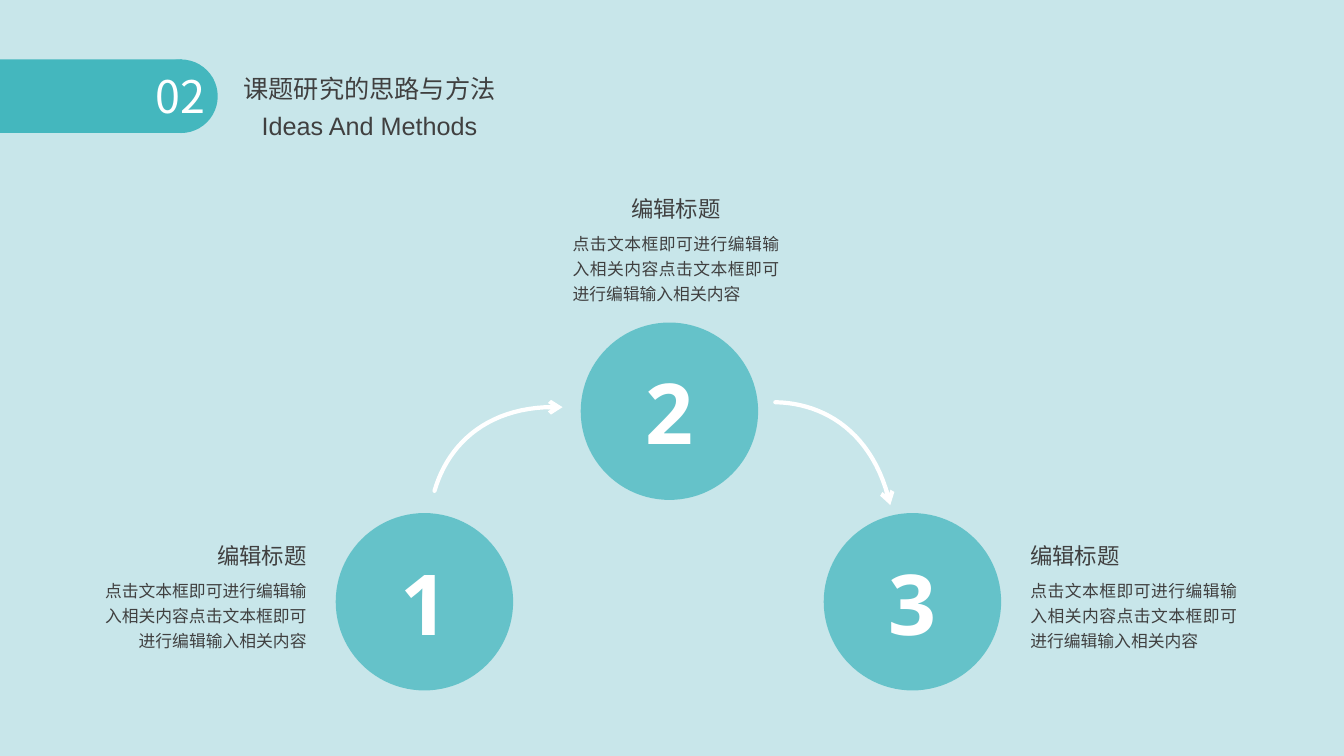
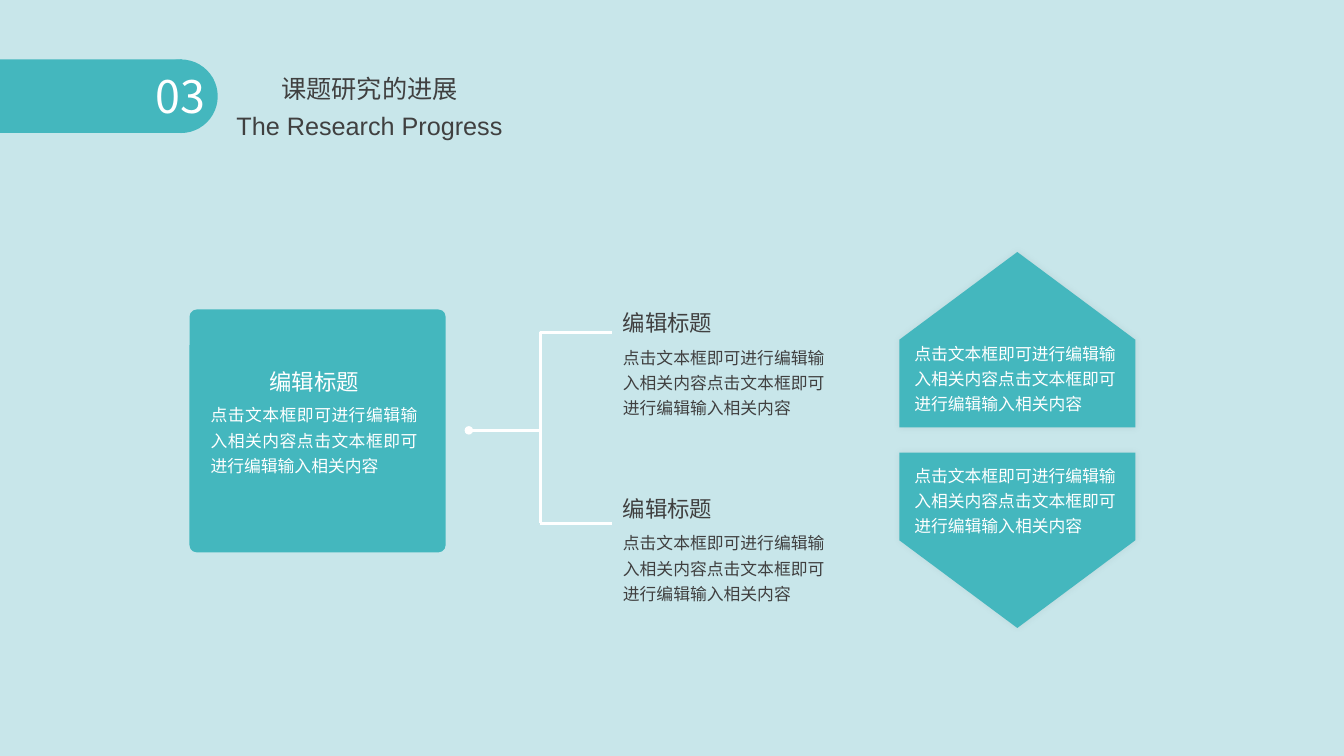
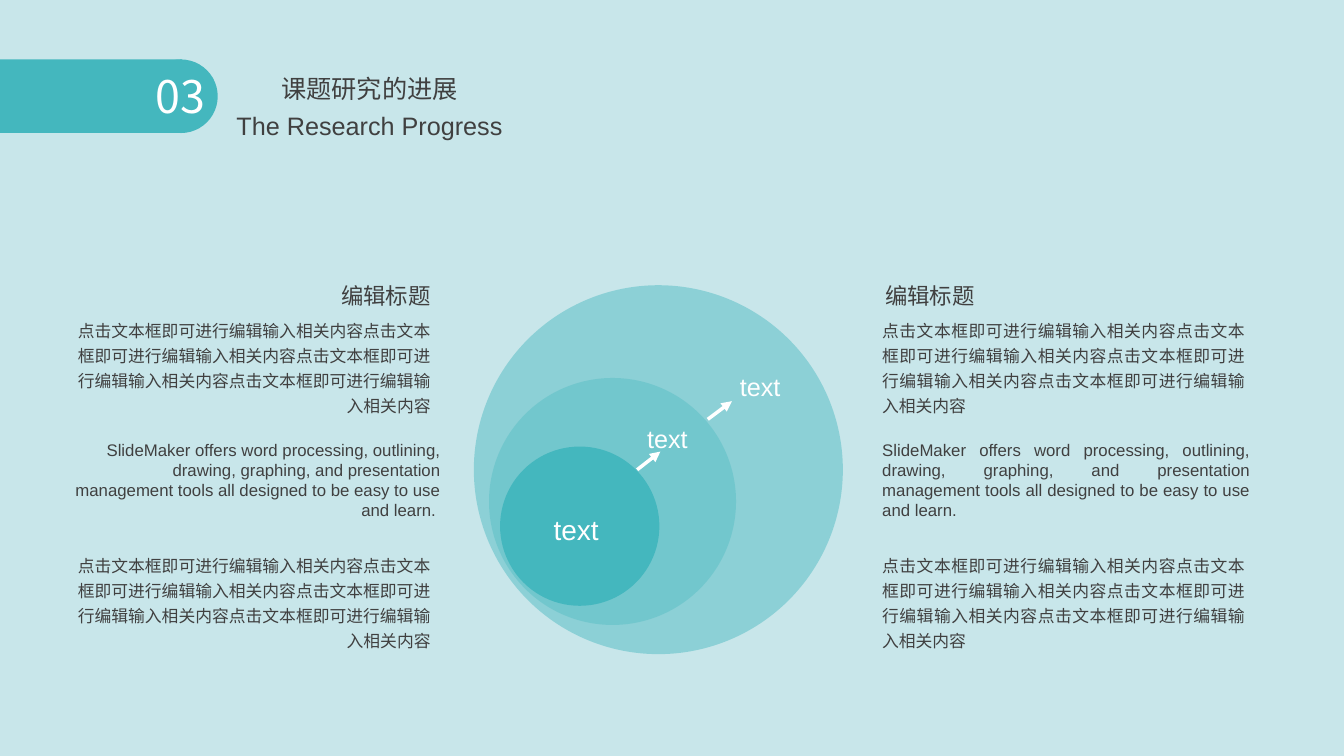
from lxml import etree
from pptx import Presentation
from pptx.dml.color import RGBColor
from pptx.enum.shapes import MSO_CONNECTOR, MSO_SHAPE
from pptx.enum.text import MSO_ANCHOR, PP_ALIGN
from pptx.oxml.ns import qn
from pptx.util import Inches, Pt

TEAL = RGBColor(0x44, 0xB7, 0xBE)
PALE = RGBColor(0xC8, 0xE6, 0xEA)
DARK = RGBColor(0x40, 0x40, 0x40)
WHITE = RGBColor(0xFF, 0xFF, 0xFF)

HAN = "Noto Sans CJK SC"
LATIN = "Arial"
DIGIT = "Open Sans"

LEFT, CENTER, RIGHT = PP_ALIGN.LEFT, PP_ALIGN.CENTER, PP_ALIGN.RIGHT
FLUSH = PP_ALIGN.JUSTIFY
TOP, MIDDLE = MSO_ANCHOR.TOP, MSO_ANCHOR.MIDDLE
OVAL, RECT = MSO_SHAPE.OVAL, MSO_SHAPE.RECTANGLE
ROUND, PLATE = MSO_SHAPE.ROUNDED_RECTANGLE, MSO_SHAPE.PENTAGON
LINE, ELBOW = MSO_CONNECTOR.STRAIGHT, MSO_CONNECTOR.ELBOW

HEAD = "编辑标题"
BODY = "点击文本框即可进行编辑输入相关内容" * 2
ENGLISH = ("SlideMaker offers word processing, outlining, drawing, graphing, "
           "and presentation management tools all designed to be easy to use "
           "and learn. ")


def write(shape, text, size=12, font=HAN, color=DARK, align=LEFT, bold=False,
          space=None, anchor=TOP, wrap=True, inset=True):
    """Put one formatted paragraph into a shape."""
    frame = shape.text_frame
    frame.word_wrap = wrap
    frame.vertical_anchor = anchor
    side, edge = (0.1, 0.05) if inset else (0, 0)
    frame.margin_left = frame.margin_right = Inches(side)
    frame.margin_top = frame.margin_bottom = Inches(edge)
    para = frame.paragraphs[0]
    para.alignment = align
    if space:
        para.line_spacing = space
    run = para.add_run()
    run.text = text
    run.font.size = Pt(size)
    run.font.bold = bold
    run.font.color.rgb = color
    run.font.name = font
    etree.SubElement(run.font._element, qn("a:ea"), typeface=font)


class Deck:
    """Holds the style and the current slide."""

    def __init__(self):
        """Start a wide deck with a pale ground."""
        self.show = Presentation()
        self.show.slide_width = Inches(13.33)
        self.show.slide_height = Inches(7.5)
        ground = self.show.slide_master.background.fill
        ground.solid()
        ground.fore_color.rgb = PALE

    def page(self, number, title, under):
        """Add a slide with its number band and two-line title."""
        self.slide = self.show.slides.add_slide(self.show.slide_layouts[5])
        self.shapes = self.slide.shapes
        self.shape(RECT, 0, 0.59, 1.81, 0.73)
        self.shape(OVAL, 1.43, 0.59, 0.73, 0.73)
        self.text(number, 1.31, 0.63, 0.96, 0.64, size=32, color=WHITE,
                  align=CENTER, anchor=MIDDLE)
        head = self.shapes.title
        head.left, head.top = Inches(2.3), Inches(0.38)
        head.width, head.height = Inches(2.73), Inches(0.62)
        write(head, title, size=18, align=CENTER, space=2, wrap=False)
        self.text(under, 0.92, 1.05, 5.49, 0.4, size=18, font=LATIN,
                  align=CENTER)

    def shape(self, kind, left, top, width, height, alpha=None, turn=0):
        """Add a teal shape without outline or shadow."""
        item = self.shapes.add_shape(kind, Inches(left), Inches(top),
                                     Inches(width), Inches(height))
        item.rotation = turn
        item.shadow.inherit = False
        item.fill.solid()
        item.fill.fore_color.rgb = TEAL
        item.line.fill.background()
        if alpha:
            color = item.element.spPr.find(".//" + qn("a:srgbClr"))
            etree.SubElement(color, qn("a:alpha"), val=str(alpha * 1000))
        return item

    def glow(self, item):
        """Give a shape a faint soft shadow."""
        effect = item.element.spPr.find(qn("a:effectLst"))
        shade = etree.SubElement(effect, qn("a:outerShdw"),
                                 blurRad=str(Pt(5)), dist="0", algn="ctr",
                                 rotWithShape="0")
        color = etree.SubElement(shade, qn("a:srgbClr"), val="000000")
        etree.SubElement(color, qn("a:alpha"), val="5000")

    def text(self, words, left, top, width, height, **style):
        """Add a text box."""
        box = self.shapes.add_textbox(Inches(left), Inches(top),
                                      Inches(width), Inches(height))
        write(box, words, **style)

    def body(self, left, top, width=2.25, times=1, **style):
        """Add a block of body text."""
        self.text(BODY * times, left, top, width, 0.86, space=1.25, **style)

    def heading(self, left, top, **style):
        """Add a small heading."""
        self.text(HEAD, left, top, 1.49, 0.37, size=16, **style)

    def stroke(self, item, weight, **ends):
        """Draw a white line with the given end marks."""
        item.line.color.rgb = WHITE
        item.line.width = Pt(weight)
        line = item.element.spPr.find(qn("a:ln"))
        for end, mark in ends.items():
            etree.SubElement(line, qn("a:" + end), type=mark)
        return line

    def link(self, start, end, weight=2, kind=LINE, **ends):
        """Add a connector."""
        item = self.shapes.add_connector(
            kind, *(Inches(value) for value in start + end))
        self.stroke(item, weight, **ends)
        etree.SubElement(item.element.spPr, qn("a:effectLst"))

    def curve(self, *knots, steps=24):
        """Add a curved arrow through four cubic control points."""
        dots = []
        for step in range(steps + 1):
            t = step / steps
            parts = ((1 - t) ** 3, 3 * t * (1 - t) ** 2,
                     3 * t * t * (1 - t), t ** 3)
            dots.append(tuple(
                Inches(sum(part * knot[axis]
                           for part, knot in zip(parts, knots)))
                for axis in (0, 1)))
        path = self.shapes.build_freeform(*dots[0])
        path.add_line_segments(dots[1:], close=False)
        item = path.convert_to_shape()
        item.shadow.inherit = False
        item.fill.background()
        self.stroke(item, 3, tailEnd="arrow").set("cap", "rnd")


def methods(deck):
    """Build the three linked steps."""
    deck.page("02", "课题研究的思路与方法", "Ideas And Methods")
    deck.curve((4.31, 4.87), (4.45, 4.39), (4.86, 4.01), (5.58, 4.04))
    deck.curve((7.69, 3.99), (8.19, 4), (8.67, 4.3), (8.83, 5.01))
    steps = (("1", 3.33, 5.09), ("2", 5.76, 3.2), ("3", 8.17, 5.09))
    for digit, left, top in steps:
        disc = deck.shape(OVAL, left, top, 1.76, 1.76, alpha=75)
        write(disc, digit, size=60, font=DIGIT, color=WHITE, bold=True,
              align=CENTER, anchor=MIDDLE, inset=False)
    notes = ((1.65, 0.89, 5.33, RIGHT, RIGHT),
             (5.96, 5.58, 1.89, CENTER, FLUSH),
             (10.12, 10.12, 5.33, LEFT, FLUSH))
    for head, left, top, side, align in notes:
        deck.heading(head, top, align=side)
        deck.body(left, top + 0.33, align=align)


def branches(deck):
    """Build the card, its two branches and the two plates."""
    deck.page("03", "课题研究的进展", "The Research Progress")
    deck.link((4.65, 4.27), (6.07, 3.3), kind=ELBOW, headEnd="oval")
    deck.link((5.36, 4.27), (5.36, 5.19))
    deck.link((5.36, 5.19), (6.07, 5.19))
    card = deck.shape(ROUND, 1.88, 3.07, 2.54, 2.41)
    card.adjustments[0] = 0.03
    deck.heading(2.37, 3.6, color=WHITE, align=CENTER)
    deck.body(1.99, 3.92, color=WHITE, align=FLUSH)
    for top in (3.02, 4.86):
        deck.heading(6.08, top)
        deck.body(6.08, top + 0.33)
    for top, turn, words in ((2.2, 270, 3.31), (4.19, 90, 4.52)):
        deck.glow(deck.shape(PLATE, 9.22, top, 1.74, 2.34, turn=turn))
        deck.body(8.97, words, color=WHITE)


def circles(deck):
    """Build the nested circles with a column on each side."""
    deck.page("03", "课题研究的进展", "The Research Progress")
    rings = ((4.7, 2.83, 3.66, 45), (4.85, 3.75, 2.45, 35),
             (4.96, 4.43, 1.58, None))
    for left, top, size, alpha in rings:
        deck.shape(OVAL, left, top, size, size, alpha=alpha)
    labels = ((4.96, 5.08, 1.51, 20), (6.14, 4.2, 0.96, 18),
              (6.96, 3.68, 1.16, 18))
    for left, top, width, size in labels:
        deck.text("text", left, top, width, 0.27, size=size, font=LATIN,
                  color=WHITE, align=CENTER, inset=False)
    for start, end in (((6.32, 4.66), (6.55, 4.48)),
                       ((7.02, 4.16), (7.26, 3.98))):
        deck.link(start, end, weight=2.5, tailEnd="triangle")
    columns = ((0.57, 2.88, 0.72, RIGHT, RIGHT),
               (8.65, 8.68, 8.75, LEFT, FLUSH))
    for left, head, middle, side, align in columns:
        deck.heading(head, 2.75, align=side)
        for top in (3.08, 5.41):
            deck.body(left, top, width=3.8, times=2, align=align)
        deck.text(ENGLISH, middle, 4.36, 3.65, 0.81, font=LATIN, align=align,
                  inset=False)


def main():
    """Build and save the deck."""
    deck = Deck()
    methods(deck)
    branches(deck)
    circles(deck)
    deck.show.save("out.pptx")


if __name__ == "__main__":
    main()
